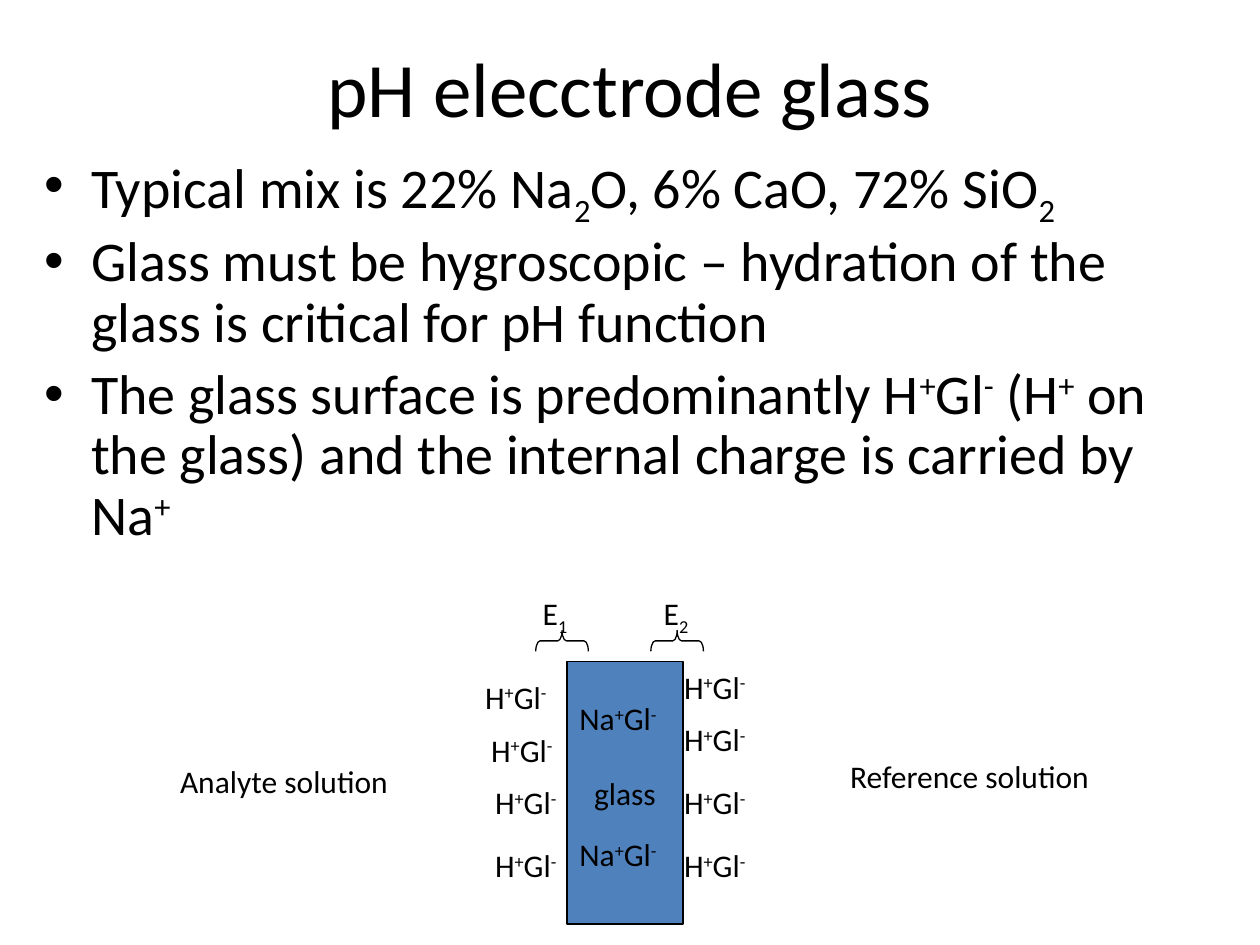
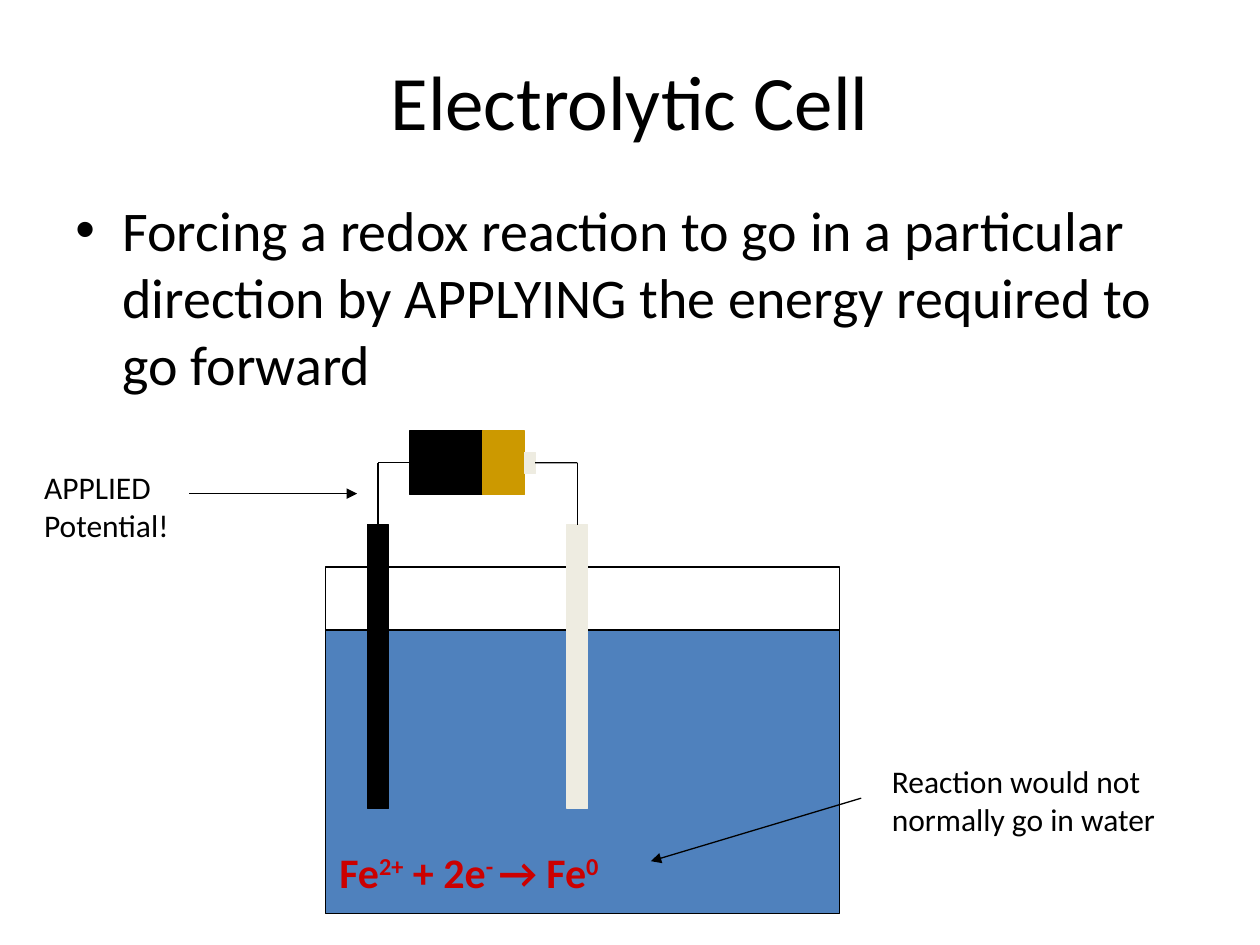
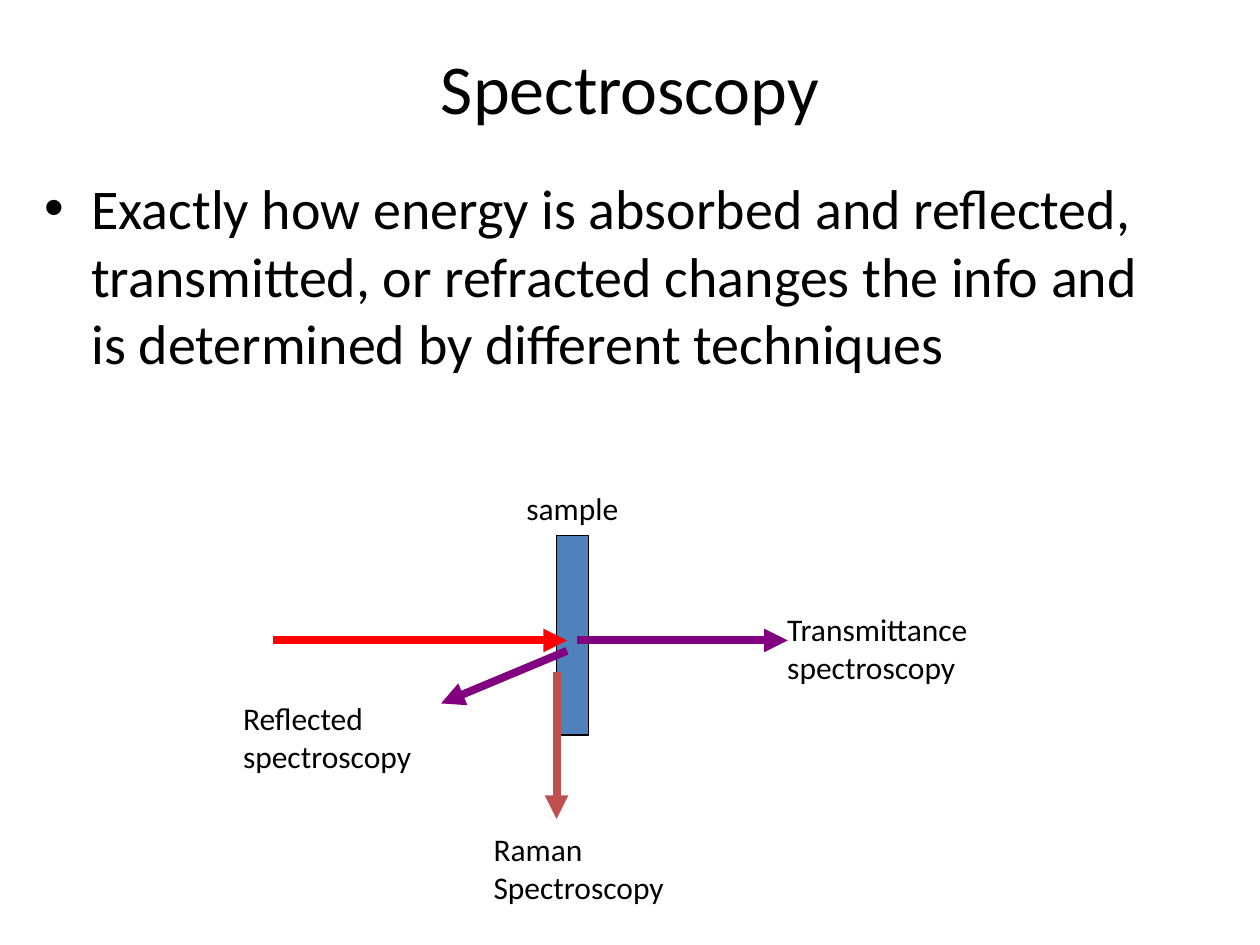
from dataclasses import dataclass

from lxml.etree import SubElement
from pptx import Presentation
from pptx.dml.color import RGBColor
from pptx.enum.shapes import MSO_CONNECTOR, MSO_SHAPE as Preset
from pptx.enum.text import MSO_ANCHOR as Anchor, PP_ALIGN as Align
from pptx.oxml.ns import qn
from pptx.util import Cm, Pt


@dataclass(frozen=True)
class Theme:
    font: str = "Calibri"
    title_size: int = 44
    small_title_size: int = 40
    body_size: int = 32
    formula_size: int = 24
    label_size: int = 18
    thin: float = 0.75
    ray: float = 4.5
    black: str = "000000"
    blue: str = "4F81BD"
    cream: str = "EEECE1"
    gold: str = "CC9900"
    formula_red: str = "CC0000"
    incoming_red: str = "FF0000"
    purple: str = "800080"
    brick: str = "C0504D"


THEME = Theme()
SUPERSCRIPT, SUBSCRIPT = 30000, -25000
TOP, LEFT, RIGHT = 0, 1, 3


@dataclass(frozen=True)
class Box:
    """A rectangle in centimetres."""
    left: float
    top: float
    width: float
    height: float

    def inner(self, left, top, width, height):
        return Box(self.left + left, self.top + top, width, height)

    def point(self, x, y):
        return self.left + x, self.top + y

    def lengths(self):
        return Cm(self.left), Cm(self.top), Cm(self.width), Cm(self.height)


def split_baselines(text):
    """Yield (piece, baseline); ^x^ is superscript and ~x~ is subscript."""
    for index, outer in enumerate(text.split("^")):
        if index % 2:
            yield outer, SUPERSCRIPT
            continue
        for position, piece in enumerate(outer.split("~")):
            if piece:
                yield piece, SUBSCRIPT if position % 2 else 0


def add_runs(paragraph, text, size, color=THEME.black, bold=False):
    for piece, baseline in split_baselines(text):
        run = paragraph.add_run()
        run.text = piece
        run.font.name = THEME.font
        run.font.size = Pt(size)
        run.font.bold = bold
        run.font.color.rgb = RGBColor.from_string(color)
        if baseline:
            run._r.get_or_add_rPr().set("baseline", str(baseline))


def add_text(slide, box, text, size=THEME.label_size, wrap=False, **style):
    """Add a text box with one paragraph for each line of text."""
    frame = slide.shapes.add_textbox(*box.lengths()).text_frame
    frame.word_wrap = wrap
    for index, line in enumerate(text.split("\n")):
        paragraph = frame.add_paragraph() if index else frame.paragraphs[0]
        add_runs(paragraph, line, size, **style)
    return frame


def add_title(slide, box, text, size=THEME.title_size):
    frame = add_text(slide, box, text, size, wrap=True)
    frame.vertical_anchor = Anchor.MIDDLE
    frame.paragraphs[0].alignment = Align.CENTER


def add_bullets(slide, box, items, line_spacing=1.0):
    frame = add_text(slide, box, "\n".join(items), THEME.body_size, wrap=True)
    for index, paragraph in enumerate(frame.paragraphs):
        properties = paragraph._p.get_or_add_pPr()
        properties.set("marL", str(Cm(0.95)))
        properties.set("indent", str(Cm(-0.95)))
        SubElement(properties, qn("a:buFont"), typeface="Arial")
        SubElement(properties, qn("a:buChar"), char="•")
        paragraph.line_spacing = line_spacing
        paragraph.space_before = Pt(0.2 * THEME.body_size if index else 0)


def add_shape(slide, box, fill=None, line=THEME.black, preset=Preset.RECTANGLE):
    shape = slide.shapes.add_shape(preset, *box.lengths())
    shape.shadow.inherit = False
    if fill:
        shape.fill.solid()
        shape.fill.fore_color.rgb = RGBColor.from_string(fill)
    else:
        shape.fill.background()
    shape.line.color.rgb = RGBColor.from_string(line)
    shape.line.width = Pt(THEME.thin)
    return shape


def add_line(slide, start, end, color=THEME.black, width=THEME.thin, arrow=False):
    connector = slide.shapes.add_connector(
        MSO_CONNECTOR.STRAIGHT, *(Cm(value) for value in (*start, *end)))
    connector.line.color.rgb = RGBColor.from_string(color)
    connector.line.width = Pt(width)
    if arrow:
        SubElement(connector.line._get_or_add_ln(), qn("a:tailEnd"), type="triangle")
    SubElement(connector._element.spPr, qn("a:effectLst"))
    return connector


def draw_glass_membrane(slide, box):
    glass = add_shape(slide, box.inner(8.05, 1.48, 2.34, 5.29), THEME.blue)
    glass.text_frame.word_wrap = False
    glass.text_frame.vertical_anchor = Anchor.MIDDLE
    glass_name = glass.text_frame.paragraphs[0]
    glass_name.alignment = Align.CENTER
    add_runs(glass_name, "glass", THEME.label_size)

    left_sites = [(6.15, 1.68), (6.27, 2.75), (6.35, 3.81), (6.35, 5.08)]
    right_sites = [(10.16, top) for top in (1.48, 2.54, 3.81, 5.08)]
    for left, top in left_sites + right_sites:
        add_text(slide, box.inner(left, top, 1.98, 1.02), "H^+^Gl^-^")
    for top in (2.11, 4.85):
        add_text(slide, box.inner(8.05, top, 2.34, 1.02), "Na^+^Gl^-^")

    for name, brace_left, name_left in (("E~1~", 7.74, 7.31), ("E~2~", 10.06, 9.75)):
        brace = add_shape(slide, box.inner(brace_left, 0.53, 0.42, 1.06),
                          preset=Preset.LEFT_BRACE)
        brace.rotation = 90
        brace.adjustments[0] = 0.208
        add_text(slide, box.inner(name_left, 0, 1.17, 1.02), name)

    add_text(slide, box.inner(0, 3.38, 5, 1.02), "Analyte solution")
    add_text(slide, box.inner(13.51, 3.28, 5.79, 1.02), "Reference solution")


def draw_electrolytic_cell(slide, box):
    add_shape(slide, box.inner(0, 4.01, box.width, 5.72), THEME.blue)
    add_shape(slide, box.inner(0, 2.74, box.width, 1.27))
    dark_electrode, light_electrode = (
        add_shape(slide, box.inner(left, 1.89, 0.42, 5.72), color, color)
        for left, color in ((0.85, THEME.black), (4.87, THEME.cream)))
    add_text(slide, box.inner(0.03, 8.24, 6.32, 1.27), "Fe^2+^ + 2e^- ^→ Fe^0^",
             THEME.formula_size, color=THEME.formula_red, bold=True)

    battery_parts = (
        (1.7, 0, 1.7, 1.28, THEME.black),
        (3.17, 0, 0.85, 1.28, THEME.gold),
        (4.02, 0.43, 0.21, 0.42, THEME.cream),
    )
    battery, _, terminal = [add_shape(slide, box.inner(*place), color, color)
                            for *place, color in battery_parts]
    wires = ((dark_electrode, 1.06, battery, LEFT, 1.7),
             (light_electrode, 5.08, terminal, RIGHT, 4.23))
    for electrode, electrode_x, pole, side, pole_x in wires:
        corner = box.point(electrode_x, 0.64)
        riser = add_line(slide, box.point(electrode_x, 1.89), corner)
        riser.begin_connect(electrode, TOP)
        lead = add_line(slide, box.point(pole_x, 0.64), corner)
        lead.begin_connect(pole, side)


def draw_cell_callouts(slide, box):
    add_text(slide, box.inner(0, 0, 3.12, 1.78), "APPLIED\nPotential!")
    add_line(slide, box.point(3.17, 0.63), box.point(6.56, 0.63), arrow=True)
    add_text(slide, box.inner(17.09, 5.92, 6.4, 1.78),
             "Reaction would not normally go in water", wrap=True)
    add_line(slide, box.point(16.72, 6.77), box.point(12.48, 8.04), arrow=True)


def draw_light_paths(slide, box):
    add_shape(slide, box.inner(6.57, 1.07, 0.64, 4.02), THEME.blue)
    rays = (
        ((0.85, 3.18), (6.78, 3.18), THEME.incoming_red),
        ((6.99, 3.18), (11.23, 3.18), THEME.purple),
        ((6.78, 3.39), (4.24, 4.45), THEME.purple),
        ((6.57, 3.82), (6.57, 6.78), THEME.brick),
    )
    for start, end, color in rays:
        add_line(slide, box.point(*start), box.point(*end), color, THEME.ray, arrow=True)
    labels = (
        ("sample", 5.71, 0, 2.57, 1.02),
        ("Reflected\nspectroscopy", 0, 4.24, 4.24, 1.78),
        ("Transmittance\nspectroscopy", 10.97, 2.44, 4.52, 1.78),
        ("Raman\nSpectroscopy", 5.05, 6.88, 4.37, 1.78),
    )
    for text, *place in labels:
        add_text(slide, box.inner(*place), text)


def build_electrode_glass(slide):
    add_title(slide, Box(1.27, 0.43, 22.86, 2.62), "pH elecctrode glass")
    add_bullets(slide, Box(0.64, 2.97, 23.93, 10.16), (
        "Typical mix is 22% Na~2~O, 6% CaO, 72% SiO~2~",
        "Glass must be hygroscopic – hydration of the glass is critical for pH function",
        "The glass surface is predominantly H^+^Gl^-^ (H^+^ on the glass) "
        "and the internal charge is carried by Na^+^",
    ), line_spacing=0.9)
    draw_glass_membrane(slide, Box(3.38, 11.86, 19.3, 6.77))


def build_electrolytic_cell(slide):
    add_title(slide, Box(1.27, 0.43, 22.86, 3.18), "Electrolytic Cell")
    add_bullets(slide, Box(1.27, 3.81, 22.86, 12.57), (
        "Forcing a redox reaction to go in a particular direction by APPLYING "
        "the energy required to go forward",
    ))
    draw_electrolytic_cell(slide, Box(6.56, 8.69, 10.37, 9.73))
    draw_cell_callouts(slide, Box(0.64, 9.32, 23.49, 8.04))


def build_spectroscopy(slide):
    add_title(slide, Box(1.27, 0.76, 22.86, 1.98), "Spectroscopy", THEME.small_title_size)
    add_bullets(slide, Box(0.64, 3.38, 22.86, 6.15), (
        "Exactly how energy is absorbed and reflected, transmitted, or refracted "
        "changes the info and is determined by different techniques",
    ))
    draw_light_paths(slide, Box(4.65, 9.73, 15.49, 8.66))


def main():
    presentation = Presentation()
    presentation.slide_width = Cm(25.4)
    presentation.slide_height = Cm(19.05)
    blank_layout = presentation.slide_layouts[6]
    for build in (build_electrode_glass, build_electrolytic_cell, build_spectroscopy):
        build(presentation.slides.add_slide(blank_layout))
    presentation.save("out.pptx")


if __name__ == "__main__":
    main()
